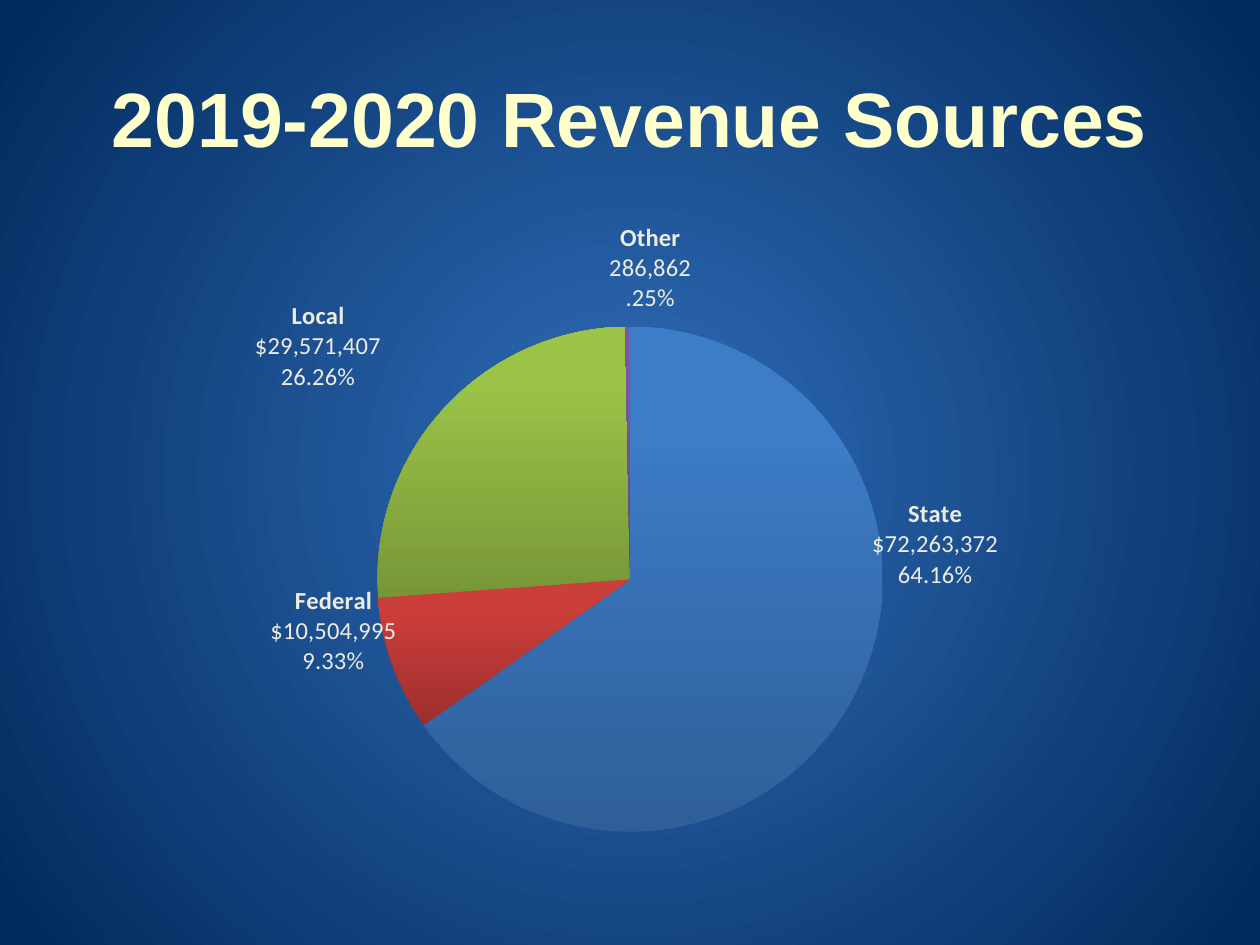
from lxml import etree
from pptx import Presentation
from pptx.chart import data as cd
from pptx.dml.color import RGBColor
from pptx.enum import chart as ch, text
from pptx.oxml import ns, parse_xml
from pptx.util import Cm, Pt

HUES = {
    "title": "FFFFCC", "label": "EEECE1", "white": "FFFFFF",
    "glow": "2C67B0", "edge": "00295C",
}
PARTS = [
    (63940000, "State\n$72,263,372\n64.16%", "2F5F99", "3D7CC7", (0.01, -0.32)),
    (8462000, "Federal\n$10,504,995\n9.33%", "9C2F2D", "CB3E3A", (0.01, -0.13)),
    (25380000, "Local\n$29,571,407\n26.26%", "779737", "9BC348", (-0.05, -0.02)),
    (287500, "Other\n286,862\n.25%", "5F4480", "7B58A6", (0.02, -0.01)),
]


def style(font, name, size, hue, bold=False):
    """Set the face, size, colour and weight of a font."""
    font.name, font.size, font.bold = name, Pt(size), bold
    font.color.rgb = RGBColor.from_string(hue)


def blend(fill, *stops):
    """Fill with a gradient of two (position, colour) stops."""
    fill.gradient()
    for stop, (pos, hue) in zip(fill.gradient_stops, stops):
        stop.position = pos
        stop.color.rgb = RGBColor.from_string(hue)


def layout(x, y, w=None, h=None):
    """Return a manual chart layout, for an inner plot if it has a size."""
    node = parse_xml(f"<c:layout {ns.nsdecls('c')}><c:manualLayout/></c:layout>")
    vals = {"x": x, "y": y}
    if w:
        vals = {"layoutTarget": "inner", "xMode": "edge", "yMode": "edge",
                **vals, "w": w, "h": h}
    for tag, val in vals.items():
        etree.SubElement(node[0], ns.qn(f"c:{tag}")).set("val", str(val))
    return node


def add_back(slide):
    """Give the slide a round gradient background."""
    fill = slide.background.fill
    blend(fill, (0.1, HUES["glow"]), (1, HUES["edge"]))
    line = slide.element.find(".//" + ns.qn("a:lin"))
    ring = parse_xml(
        f'<a:path {ns.nsdecls("a")} path="circle">'
        '<a:fillToRect l="50000" t="50000" r="50000" b="50000"/></a:path>')
    line.getparent().replace(line, ring)


def add_title(slide, words):
    """Place and format the title."""
    shape = slide.shapes.title
    shape.left, shape.top = Cm(1.27), Cm(0.76)
    shape.width, shape.height = Cm(22.86), Cm(3.18)
    frame = shape.text_frame
    frame.text = words
    frame.vertical_anchor = text.MSO_ANCHOR.MIDDLE
    para = frame.paragraphs[0]
    para.alignment = text.PP_ALIGN.CENTER
    style(para.runs[0].font, "Arial", 44, HUES["title"], True)


def add_label(point, words, shift):
    """Write a slice label with a bold first line and shift it."""
    label = point.data_label
    frame = label.text_frame
    frame.text = words
    for i, para in enumerate(frame.paragraphs):
        style(para.runs[0].font, "Calibri", 14, HUES["label"], i == 0)
    label.position = ch.XL_LABEL_POSITION.OUTSIDE_END
    rich = frame._txBody
    rich.getparent().addprevious(layout(*shift))


def add_pie(slide):
    """Add the pie of revenue sources."""
    data = cd.CategoryChartData(number_format="#,##0")
    data.categories = [str(i + 1) for i in range(len(PARTS))]
    data.add_series("Series 1", [part[0] for part in PARTS])
    chart = slide.shapes.add_chart(
        ch.XL_CHART_TYPE.PIE, Cm(1.27), Cm(4.45), Cm(22.86), Cm(12.57), data).chart
    chart.has_legend = chart.has_title = False
    style(chart.font, "Calibri", 10, HUES["white"])
    plot = chart.plots[0]
    plot.vary_by_categories = True
    area = chart.element.find(".//" + ns.qn("c:plotArea"))
    for old in area.findall(ns.qn("c:layout")):
        area.remove(old)
    area.insert(0, layout(0.08, 0.17, 0.84, 0.81))
    series = plot.series[0]
    labels = series.data_labels
    labels.show_value = True
    labels.number_format, labels.number_format_is_linked = "#,##0", False
    labels.position = ch.XL_LABEL_POSITION.BEST_FIT
    style(labels.font, "Calibri", 14, HUES["label"])
    for i, (_, words, dark, light, shift) in enumerate(PARTS):
        point = series.points[i]
        fill = point.format.fill
        blend(fill, (0, dark), (0.8, light))
        fill.gradient_angle = 90
        add_label(point, words, shift)
    for lead in chart.element.iter(ns.qn("c:showLeaderLines")):
        lead.set("val", "0")


def main():
    """Build and save the slide."""
    deck = Presentation()
    deck.slide_width, deck.slide_height = Cm(25.4), Cm(19.05)
    slide = deck.slides.add_slide(deck.slide_layouts[5])
    add_back(slide)
    add_title(slide, "2019-2020 Revenue Sources")
    add_pie(slide)
    deck.save("out.pptx")


if __name__ == "__main__":
    main()
